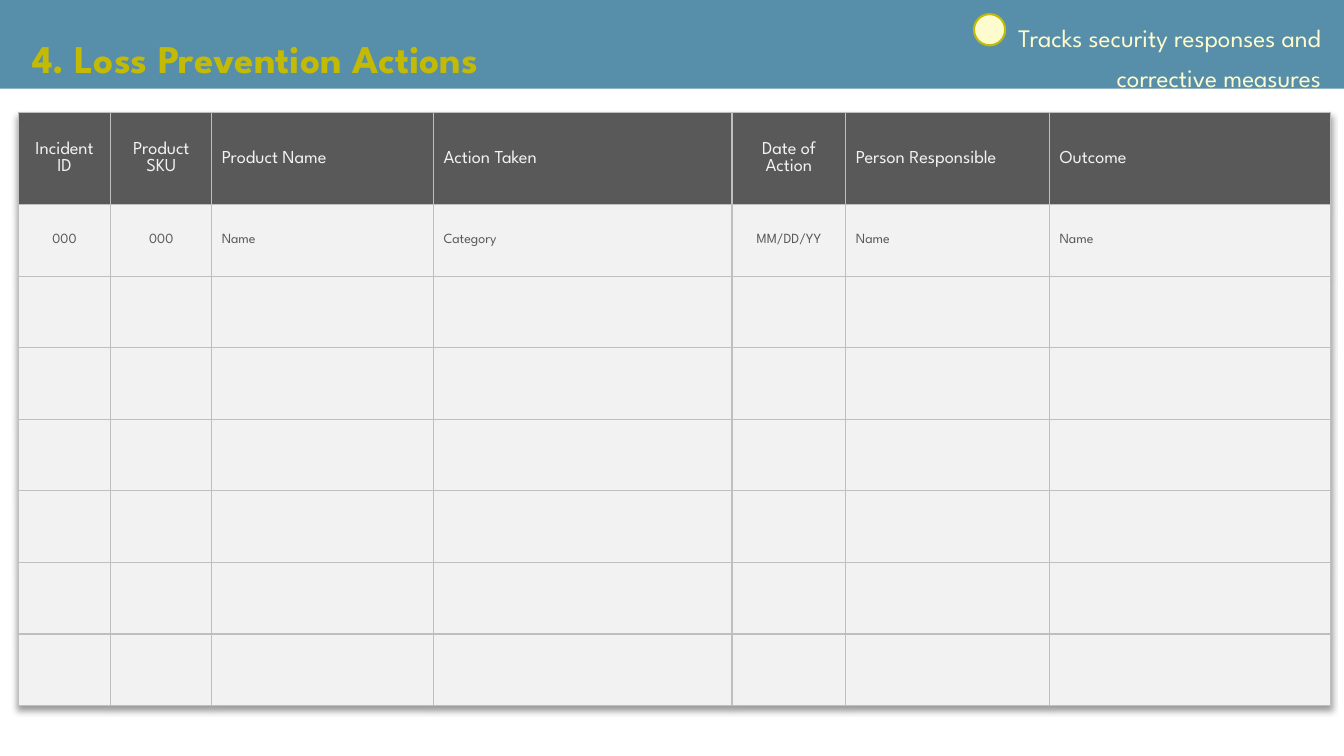
import pptx
import pptx.dml.color
import pptx.enum.shapes
import pptx.enum.text
import pptx.oxml
import pptx.oxml.ns
import pptx.util
from pptx.util import Inches

COLORS = {
    "banner": "578EA9",
    "gold": "C3BA05",
    "cream": "FEFCCE",
    "dark": "595959",
    "light": "F2F2F2",
    "border": "BFBFBF",
}
FONT = "League Spartan"
LEFT = pptx.enum.text.PP_ALIGN.LEFT
CENTER = pptx.enum.text.PP_ALIGN.CENTER
RIGHT = pptx.enum.text.PP_ALIGN.RIGHT

# text, box, alignment, font format, colour
HEADINGS = [
    ("4. Loss Prevention Actions", (0.22, 0.14, 8.08, 0.57), LEFT,
     {"size": pptx.util.Pt(28), "bold": True}, "gold"),
    ("Tracks security responses and corrective measures", (9.81, 0.07, 3.39, 0.71), RIGHT,
     {"size": pptx.util.Pt(18)}, "cream"),
]
HEADING_LINE_SPACING = 1.33

# header, sample entry, width, alignment
COLUMNS = [
    ("Incident ID", "000", 0.92, CENTER),
    ("Product SKU", "000", 1.0, CENTER),
    ("Product Name", "Name", 2.2, LEFT),
    ("Action Taken", "Category", 2.96, LEFT),
    ("Date of Action", "MM/DD/YY", 1.13, CENTER),
    ("Person Responsible", "Name", 2.02, LEFT),
    ("Outcome", "Name", 2.79, LEFT),
]
TABLE_LEFT, TABLE_TOP = 0.18, 1.12
HEADER_HEIGHT, ROW_HEIGHT, BODY_ROWS = 0.91, 0.71, 7


def rgb(name):
    return pptx.dml.color.RGBColor.from_string(COLORS[name])


def paint(target, name):
    target.fill.solid()
    target.fill.fore_color.rgb = rgb(name)


def write(text_frame, text, alignment, font_format, color):
    paragraph = text_frame.paragraphs[0]
    paragraph.alignment = alignment
    run = paragraph.add_run()
    run.text = text
    for name, value in {"name": FONT, **font_format}.items():
        setattr(run.font, name, value)
    run.font.color.rgb = rgb(color)
    return paragraph


def add_shape(slide, kind, box, fill):
    shape = slide.shapes.add_shape(kind, *map(Inches, box))
    shape.shadow.inherit = False
    paint(shape, fill)
    return shape


def add_heading(slide, text, box, alignment, font_format, color):
    text_frame = slide.shapes.add_textbox(*map(Inches, box)).text_frame
    text_frame.word_wrap = True
    text_frame.auto_size = pptx.enum.text.MSO_AUTO_SIZE.SHAPE_TO_FIT_TEXT
    paragraph = write(text_frame, text, alignment, font_format, color)
    paragraph.line_spacing = HEADING_LINE_SPACING


def add_borders(cell):
    """Draw a thin line on all four sides; call before filling the cell."""
    properties = cell._tc.get_or_add_tcPr()
    for side in ("lnL", "lnR", "lnT", "lnB"):
        properties.append(pptx.oxml.parse_xml(
            f'<a:{side} {pptx.oxml.ns.nsdecls("a")} w="12700"><a:solidFill>'
            f'<a:srgbClr val="{COLORS["border"]}"/></a:solidFill></a:{side}>'))


def add_table_shadow(table):
    table._tbl.tblPr.insert(0, pptx.oxml.parse_xml(
        f'<a:effectLst {pptx.oxml.ns.nsdecls("a")}>'
        '<a:outerShdw blurRad="50800" dist="38100" dir="5400000" algn="t" rotWithShape="0">'
        '<a:srgbClr val="000000"><a:alpha val="40000"/></a:srgbClr>'
        '</a:outerShdw></a:effectLst>'))


def add_action_table(slide):
    heights = [HEADER_HEIGHT] + [ROW_HEIGHT] * BODY_ROWS
    widths = [column[2] for column in COLUMNS]
    table = slide.shapes.add_table(
        len(heights), len(widths), Inches(TABLE_LEFT), Inches(TABLE_TOP),
        Inches(sum(widths)), Inches(sum(heights))).table
    table.horz_banding = False
    add_table_shadow(table)
    for row, height in zip(table.rows, heights):
        row.height = Inches(height)
    for column_index, (header, sample, width, alignment) in enumerate(COLUMNS):
        table.columns[column_index].width = Inches(width)
        for row_index in range(len(heights)):
            cell = table.cell(row_index, column_index)
            cell.vertical_anchor = pptx.enum.text.MSO_ANCHOR.MIDDLE
            add_borders(cell)
            paint(cell, "light" if row_index else "dark")
        for row_index, text, size, color in ((0, header, 13, "light"), (1, sample, 10, "dark")):
            write(table.cell(row_index, column_index).text_frame, text, alignment,
                  {"size": pptx.util.Pt(size), "bold": False}, color)


def main():
    presentation = pptx.Presentation()
    presentation.slide_width = Inches(13.33)
    presentation.slide_height = Inches(7.5)
    slide = presentation.slides.add_slide(presentation.slide_layouts[6])

    shapes = pptx.enum.shapes.MSO_SHAPE
    banner = add_shape(slide, shapes.RECTANGLE, (0, 0, 13.33, 0.88), "banner")
    banner.line.fill.background()
    for heading in HEADINGS:
        add_heading(slide, *heading)
    marker = add_shape(slide, shapes.OVAL, (9.66, 0.14, 0.31, 0.31), "cream")
    marker.line.color.rgb = rgb("gold")
    marker.line.width = pptx.util.Pt(1.5)
    add_action_table(slide)

    presentation.save("out.pptx")


if __name__ == "__main__":
    main()
